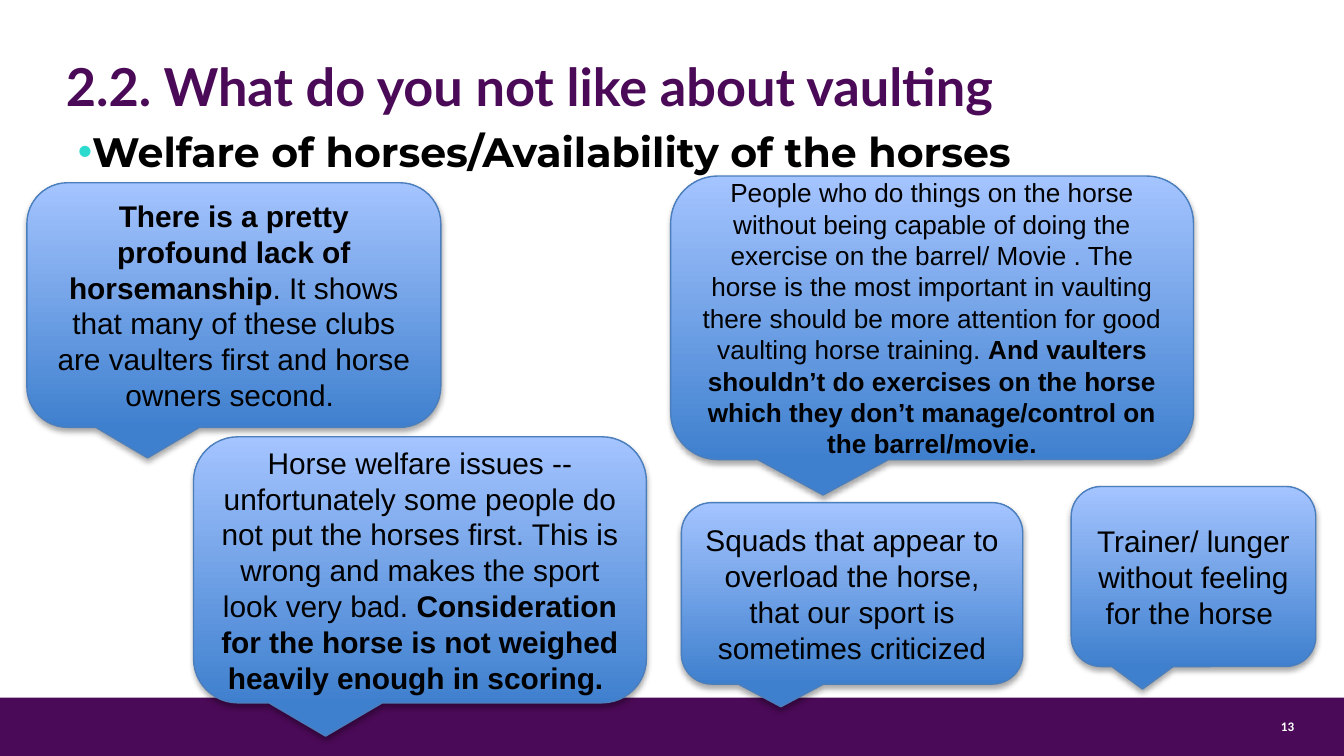
from lxml import etree
from pptx import Presentation
from pptx.dml.color import RGBColor
from pptx.enum import shapes, text
from pptx.oxml import ns
from pptx.util import Inches, Pt

# Content
TITLE = "2.2. What do you not like about vaulting"
TOPIC = "Welfare of horses/Availability of the horses"
PAGE_NUMBER = "13"

# Each quote: (left, top, width, height), type size name, [(words, bold), ...]
QUOTES = [
    ((0.2, 1.36, 3.08, 1.82), "quote", [
        ("There is a pretty profound lack of horsemanship", True),
        (". It shows that many of these clubs are vaulters first and "
         "horse owners second. ", False)]),
    ((1.44, 3.25, 3.37, 1.98), "quote", [
        ("Horse welfare issues -- unfortunately some people do not put the "
         "horses first. This is wrong and makes the sport look very bad. ", False),
        ("Consideration for the horse is not weighed heavily enough in "
         "scoring. ", True)]),
    ((4.99, 1.31, 3.89, 2.11), "long_quote", [
        ("People who do things on the horse without being capable of doing "
         "the exercise on the barrel/ Movie . The horse is the most important "
         "in vaulting there should be more attention for good vaulting horse "
         "training. ", False),
        ("And vaulters shouldn’t do exercises on the horse which they don’t "
         "manage/control on the barrel/movie.", True)]),
    ((5.07, 3.74, 2.54, 1.35), "quote", [
        ("Squads that appear to overload the horse, that our sport is "
         "sometimes criticized", False)]),
    ((7.97, 3.62, 1.82, 1.34), "quote", [
        ("Trainer/ lunger without feeling for the horse ", False)]),
]

THEME = {
    "purple": "4B0A57", "teal": "2CDACE", "black": "000000", "white": "FFFFFF",
    "gradient": ("3F80CE", "A4C4FF"), "outline": "4B7EBC",
    "title": ("Lato", 28, "purple"),
    "topic": ("Montserrat", 22, "black"),
    "quote": ("Arial", 16, "black"),
    "long_quote": ("Arial", 14, "black"),
    "number": ("Calibri", 7, "white"),
}


def color(name):
    return RGBColor.from_string(THEME.get(name, name))


def apply(target, values):
    for name, value in values.items():
        setattr(target, name, value)


def place(shape, left, top, width, height):
    apply(shape, {"left": Inches(left), "top": Inches(top),
                  "width": Inches(width), "height": Inches(height)})


def write(box, style, spans, align, anchor, **margins):
    family, size, ink = THEME[style]
    frame = box.text_frame
    apply(frame, {"word_wrap": True, "auto_size": text.MSO_AUTO_SIZE.NONE,
                  "vertical_anchor": anchor, **margins})
    para = frame.paragraphs[0]
    apply(para, {"alignment": align, "space_before": Pt(0)})
    for words, bold in spans:
        span = para.add_run()
        span.text = words
        apply(span.font, {"name": family, "size": Pt(size), "bold": bold})
        span.font.color.rgb = color(ink)
    return para


def add_bullet(para, ink):
    props = para._p.get_or_add_pPr()
    props.set("marL", "0")
    props.set("indent", str(-Inches(0.2)))
    tint = etree.SubElement(props, ns.qn("a:buClr"))
    etree.SubElement(tint, ns.qn("a:srgbClr"), val=THEME[ink])
    etree.SubElement(props, ns.qn("a:buChar"), char="•")


def add_shadow(shape):
    effects = etree.SubElement(shape._element.spPr, ns.qn("a:effectLst"))
    shadow = etree.SubElement(
        effects, ns.qn("a:outerShdw"), blurRad=str(Pt(3.1)), dist=str(Pt(1.8)),
        dir="5400000", rotWithShape="0")
    ink = etree.SubElement(shadow, ns.qn("a:srgbClr"), val=THEME["black"])
    etree.SubElement(ink, ns.qn("a:alpha"), val="35000")


def add_quote(page, bounds, style, spans):
    callout = page.shapes.add_shape(
        shapes.MSO_SHAPE.ROUNDED_RECTANGULAR_CALLOUT, *map(Inches, bounds))
    callout.fill.gradient()
    callout.fill.gradient_angle = 90
    for stop, ink, position in zip(callout.fill.gradient_stops,
                                   THEME["gradient"], (0, 1)):
        stop.color.rgb = color(ink)
        stop.position = position
    callout.line.color.rgb = color("outline")
    callout.line.width = Pt(0.75)
    add_shadow(callout)
    write(callout, style, spans, text.PP_ALIGN.CENTER, text.MSO_ANCHOR.MIDDLE)


def main():
    # A 16:9 page
    deck = Presentation()
    apply(deck, {"slide_width": Inches(10),
                 "slide_height": Inches(10) * 9 // 16})
    page = deck.slides.add_slide(deck.slide_layouts[1])
    flat = {"margin_left": 0, "margin_right": 0}

    # Footer band and page number
    band = page.shapes.add_shape(
        shapes.MSO_SHAPE.RECTANGLE, *map(Inches, (0, 5.19, 10, 0.43)))
    band.height = deck.slide_height - band.top
    band.shadow.inherit = False
    band.fill.solid()
    band.fill.fore_color.rgb = color("purple")
    band.line.fill.background()
    number = page.shapes.add_textbox(*map(Inches, (9.49, 5.29, 0.18, 0.23)))
    write(number, "number", [(PAGE_NUMBER, True)],
          text.PP_ALIGN.CENTER, text.MSO_ANCHOR.MIDDLE, **flat)

    # Title and topic
    title, body = page.shapes.title, page.placeholders[1]
    place(title, 0.49, 0.35, 9.17, 0.54)
    para = write(title, "title", [(TITLE, True)],
                 text.PP_ALIGN.LEFT, text.MSO_ANCHOR.TOP, **flat)
    para.line_spacing = Pt(34)
    place(body, 0.48, 0.89, 9.17, 3.79)
    para = write(body, "topic", [(TOPIC, True)],
                 text.PP_ALIGN.LEFT, text.MSO_ANCHOR.TOP)
    add_bullet(para, "teal")

    # Quotes
    for bounds, style, spans in QUOTES:
        add_quote(page, bounds, style, spans)

    deck.save("out.pptx")


if __name__ == "__main__":
    main()
